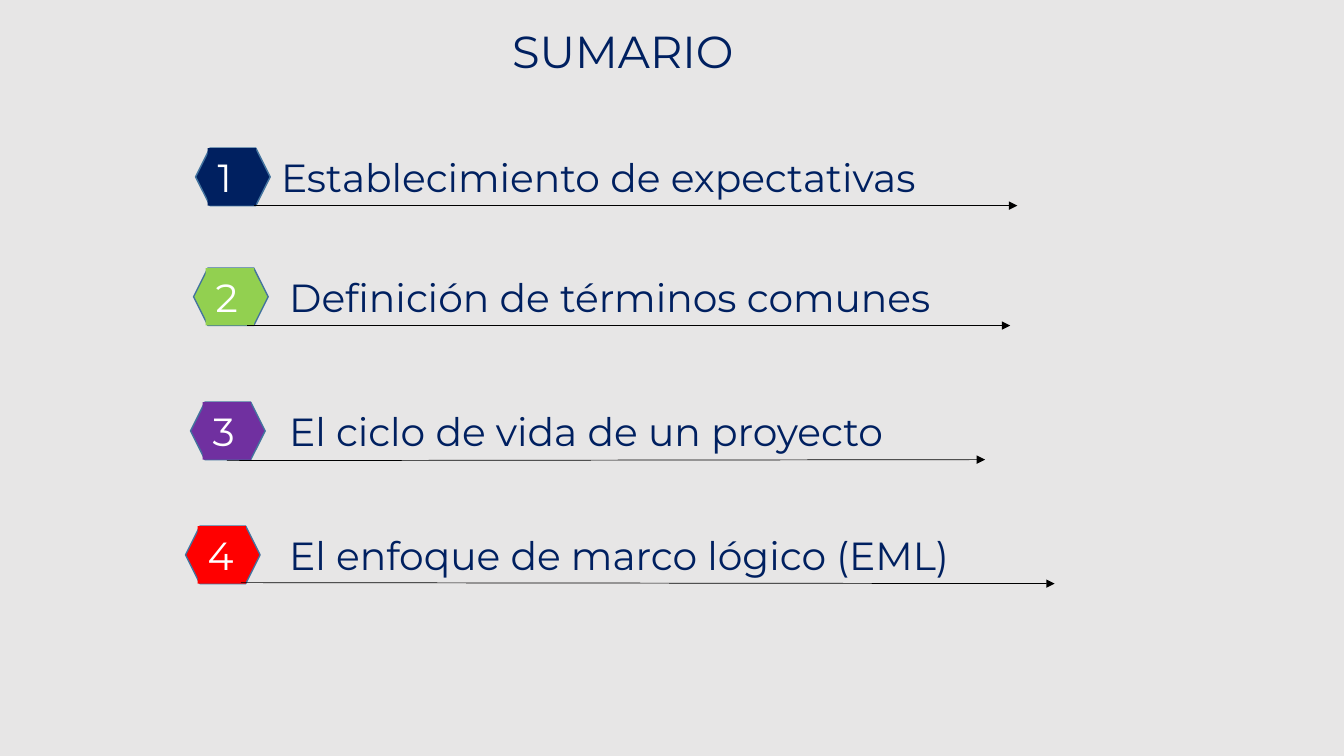
from lxml.etree import SubElement
from pptx import Presentation
from pptx.dml.color import RGBColor
from pptx.enum.shapes import MSO_CONNECTOR, MSO_SHAPE
from pptx.enum.text import MSO_ANCHOR, PP_ALIGN
from pptx.oxml.ns import qn
from pptx.util import Pt

PX = 9144
NAVY = "002060"


def rgb(value):
    return RGBColor.from_string(value)


def write(sp, text, size, color):
    tf = sp.text_frame
    tf.word_wrap = True
    tf.vertical_anchor = MSO_ANCHOR.TOP
    p = tf.paragraphs[0]
    p.text = text
    p.alignment = PP_ALIGN.LEFT
    p.font.name = "Montserrat"
    p.font.size = Pt(size)
    p.font.color.rgb = rgb(color)


prs = Presentation()
prs.slide_width = 1333 * PX
prs.slide_height = 750 * PX
s = prs.slides.add_slide(prs.slide_layouts[6])

bg = s.shapes.add_shape(MSO_SHAPE.RECTANGLE, 0, 0, prs.slide_width, prs.slide_height)
bg.shadow.inherit = False
bg.fill.solid()
bg.fill.fore_color.rgb = rgb("E7E6E6")
bg.line.fill.background()

title = s.shapes.add_textbox(498 * PX, 19 * PX, 271 * PX, 64 * PX)
write(title, "SUMARIO", 32, NAVY)

topics = [
    ("Establecimiento de expectativas", NAVY, 194, 147, 269, 724, (252, 204, 1009, 204)),
    ("Definición de términos comunes", "92D050", 192, 266, 277, 711, (245, 323, 1002, 323)),
    ("El ciclo de vida de un proyecto", "7030A0", 189, 399, 277, 677, (225, 457, 977, 456)),
    ("El enfoque de marco lógico (EML)", "FF0000", 184, 522, 277, 750, (239, 578, 1046, 579)),
]

for number, (topic, color, left, top, text_left, text_width, ends) in enumerate(topics, 1):
    badge = s.shapes.add_group_shape()
    hexagon = badge.shapes.add_shape(MSO_SHAPE.HEXAGON, left * PX, top * PX, 74 * PX, 57 * PX)
    label = badge.shapes.add_shape(MSO_SHAPE.RECTANGLE, (left + 12) * PX, top * PX, 48 * PX, 57 * PX)
    for sp in (hexagon, label):
        sp.shadow.inherit = False
        sp.fill.solid()
        sp.fill.fore_color.rgb = rgb(color)
    hexagon.line.color.rgb = rgb("43739E")
    hexagon.line.width = Pt(1)
    label.line.fill.background()
    write(label, str(number), 28, "FFFFFF")

    arrow = s.shapes.add_connector(MSO_CONNECTOR.STRAIGHT, *(v * PX for v in ends))
    arrow.line.color.rgb = rgb("000000")
    arrow.line.width = Pt(0.5)
    SubElement(arrow.line._get_or_add_ln(), qn("a:tailEnd"), type="triangle")
    SubElement(arrow._element.spPr, qn("a:effectLst"))

    box = s.shapes.add_textbox(text_left * PX, top * PX, text_width * PX, 57 * PX)
    write(box, topic, 28, NAVY)

prs.save("out.pptx")
